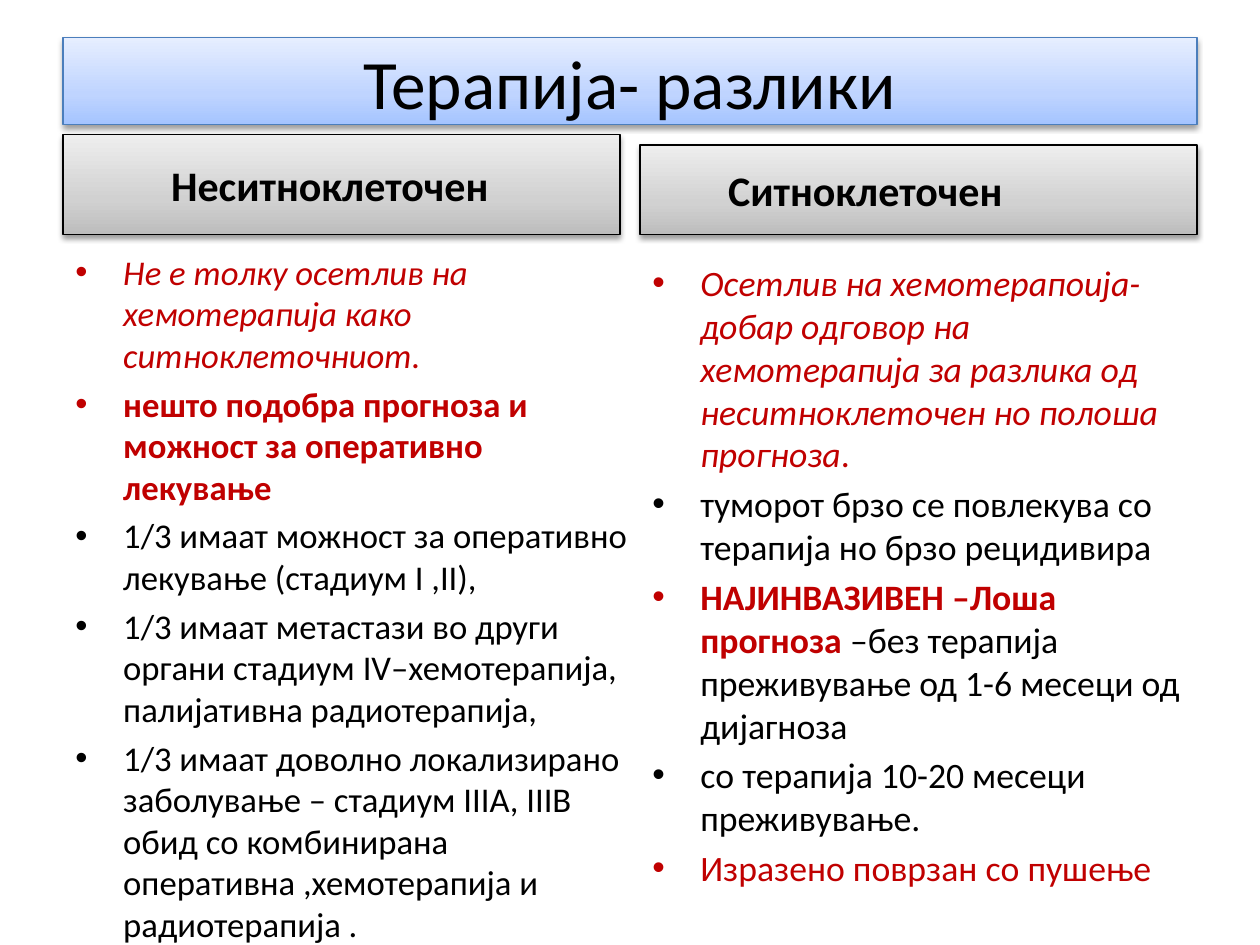
from copy import deepcopy

from lxml import etree
from pptx import Presentation
from pptx import util as u
from pptx.dml.color import RGBColor
from pptx.enum import shapes, text
from pptx.oxml import ns

BLACK = RGBColor(0x00, 0x00, 0x00)
RED = RGBColor(0xC0, 0x00, 0x00)
BLUE_EDGE = RGBColor(0x4B, 0x7E, 0xBC)
BLUES = (RGBColor(0xA4, 0xC4, 0xFF), RGBColor(0xBF, 0xD4, 0xFF), RGBColor(0xE6, 0xEE, 0xFF))
GREYS = (RGBColor(0xBD, 0xBD, 0xBD), RGBColor(0xD1, 0xD1, 0xD1), RGBColor(0xEE, 0xEE, 0xEE))
STOPS = (0, 0.35, 1)

LEFT, RIGHT = 0.5, 5.08
COLUMN_WIDTH = 4.42
HEADER_BOTTOM = 1.86

# Each bullet is a list of spans: (wording, colour, style), style being "", "b" or "i".
NON_SMALL_CELL = [
    [("Не е толку осетлив на хемотерапија како ситноклеточниот.", RED, "i")],
    [("нешто подобра прогноза и можност за оперативно лекување", RED, "b")],
    [("1/3 имаат можност за оперативно лекување (стадиум I ,II),", BLACK, "")],
    [("1/3 имаат метастази во други органи стадиум IV–хемотерапија, "
      "палијативна радиотерапија,", BLACK, "")],
    [("1/3 имаат доволно локализирано заболување – стадиум IIIA, IIIB обид со "
      "комбинирана оперативна ,хемотерапија и рaдиотерапија .", BLACK, "")],
]
SMALL_CELL = [
    [("Осетлив на хемотерапоија-добар одговор на хемотерапија за разлика од "
      "неситноклеточен но полоша прогноза", RED, "i"), (".", RED, "")],
    [("туморот брзо се повлекува со терапија но брзо рецидивира", BLACK, "")],
    [("НАЈИНВАЗИВЕН –Лоша прогноза ", RED, "b"),
     ("–без терапија преживување од 1-6 месеци од дијагноза", BLACK, "")],
    [("со терапија 10-20 месеци преживување.", BLACK, "")],
    [("Изразено поврзан со пушење", RED, "")],
]


class SlideBuilder:
    font = "Calibri"
    bullet_indent = u.Inches(0.38)

    def __init__(self, page):
        self.page = page

    def add_span(self, para, wording, size, color=BLACK, style=""):
        span = para.add_run()
        span.text = wording
        span.font.name = self.font
        span.font.size = u.Pt(size)
        span.font.color.rgb = color
        span.font.bold = style == "b"
        span.font.italic = style == "i"

    def add_shadow(self, shape):
        shape.shadow.inherit = False
        effects = shape._element.spPr.find(ns.qn("a:effectLst"))
        shadow = etree.SubElement(
            effects, ns.qn("a:outerShdw"), blurRad=str(u.Pt(3.1)), dist=str(u.Pt(1.6)),
            dir="5400000", rotWithShape="0")
        color = etree.SubElement(shadow, ns.qn("a:srgbClr"), val="000000")
        etree.SubElement(color, ns.qn("a:alpha"), val="38000")

    def fill_gradient(self, shape, colors):
        """Fill from bottom to top with one colour per entry of STOPS."""
        shape.fill.gradient()
        shape.fill.gradient_angle = 90
        stop_list = shape._element.spPr.find(ns.qn("a:gradFill")).find(ns.qn("a:gsLst"))
        stop_list.append(deepcopy(stop_list[0]))
        for stop, position, color in zip(shape.fill.gradient_stops, STOPS, colors):
            stop.position = position
            stop.color.rgb = color

    def add_banner(self, left, top, width, height, colors, edge):
        """Add a shaded bar and return its empty paragraph."""
        box = self.page.shapes.add_shape(
            shapes.MSO_SHAPE.RECTANGLE, u.Inches(left), u.Inches(top),
            u.Inches(width), u.Inches(height))
        self.fill_gradient(box, colors)
        box.line.color.rgb = edge
        box.line.width = u.Pt(0.75)
        self.add_shadow(box)
        box.text_frame.word_wrap = True
        box.text_frame.vertical_anchor = text.MSO_ANCHOR.MIDDLE
        return box.text_frame.paragraphs[0]

    def add_title(self, wording):
        para = self.add_banner(LEFT, 0.3, 9, 0.69, BLUES, BLUE_EDGE)
        para.alignment = text.PP_ALIGN.CENTER
        self.add_span(para, wording, 39.6)

    def add_header(self, wording, left, top, indent):
        para = self.add_banner(left, top, COLUMN_WIDTH, HEADER_BOTTOM - top, GREYS, BLACK)
        para.alignment = text.PP_ALIGN.LEFT
        para._p.get_or_add_pPr().set("indent", str(u.Inches(indent)))
        self.add_span(para, wording, 24, style="b")

    def add_bullets(self, items, left, top, width, height, size):
        box = self.page.shapes.add_textbox(
            u.Inches(left), u.Inches(top), u.Inches(width), u.Inches(height))
        frame = box.text_frame
        frame.word_wrap = True
        for number, spans in enumerate(items):
            para = frame.add_paragraph() if number else frame.paragraphs[0]
            para.space_before = u.Pt(4)
            props = para._p.get_or_add_pPr()
            props.set("marL", str(self.bullet_indent))
            props.set("indent", str(-self.bullet_indent))
            etree.SubElement(props, ns.qn("a:buFont"), typeface="Arial")
            etree.SubElement(props, ns.qn("a:buChar"), char="•")
            for wording, color, style in spans:
                self.add_span(para, wording, size, color, style)


def main():
    deck = Presentation()
    deck.slide_width, deck.slide_height = u.Inches(10), u.Inches(7.5)
    builder = SlideBuilder(deck.slides.add_slide(deck.slide_layouts[6]))

    builder.add_title("Терапија- разлики")
    builder.add_header("Неситноклеточен", LEFT, 1.07, 0.76)
    builder.add_bullets(NON_SMALL_CELL, LEFT, 1.94, 4.66, 4.96, 19.8)
    builder.add_header("Ситноклеточен", RIGHT, 1.15, 0.6)
    builder.add_bullets(SMALL_CELL, RIGHT, 2.02, COLUMN_WIDTH, 4.68, 20.4)

    deck.save("out.pptx")


if __name__ == "__main__":
    main()
